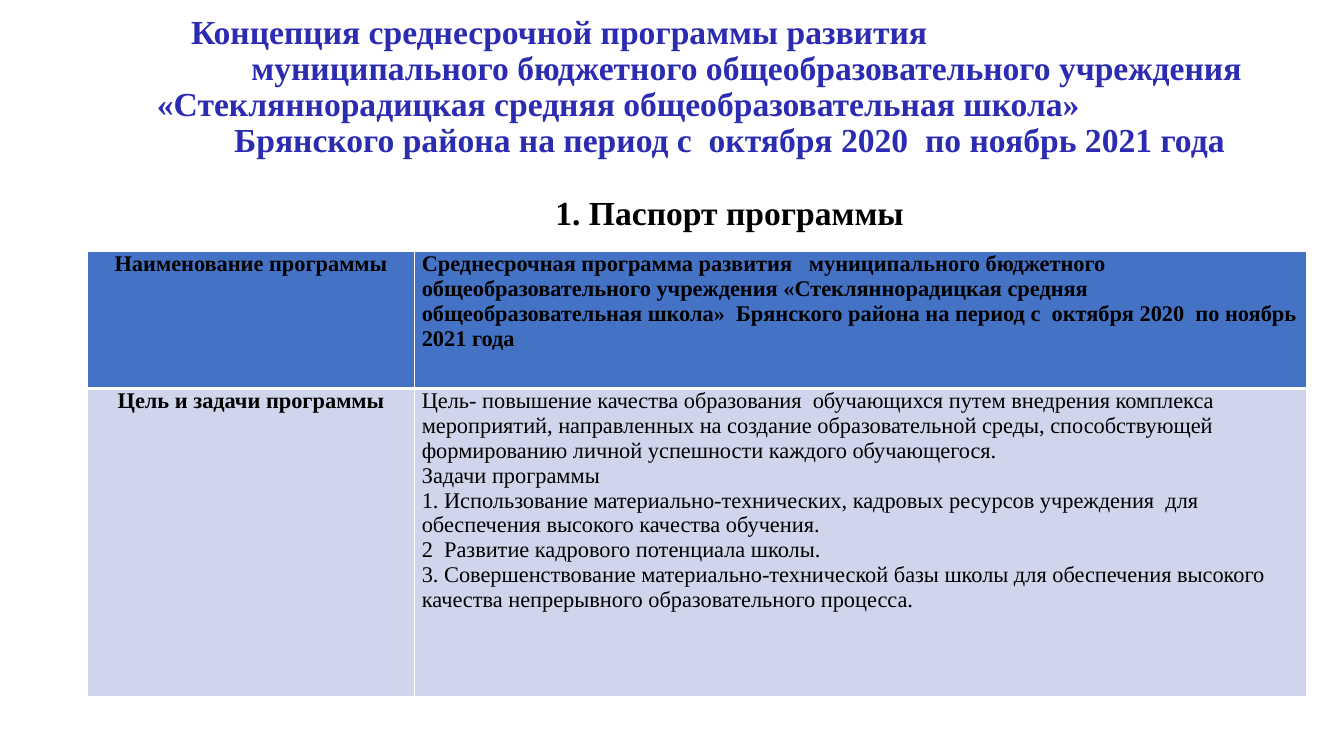
import pptx
import pptx.util
import pptx.dml.color
import pptx.enum.text
import pptx.oxml

Cm, Pt = pptx.util.Cm, pptx.util.Pt
RGBColor = pptx.dml.color.RGBColor
PP_ALIGN = pptx.enum.text.PP_ALIGN
ANCHOR = pptx.enum.text.MSO_ANCHOR

NAVY = RGBColor(0x2C, 0x2C, 0xB2)
BLACK = RGBColor(0, 0, 0)
BLUE = RGBColor(0x44, 0x72, 0xC4)
PALE = RGBColor(0xCF, 0xD5, 0xEA)
WHITE = RGBColor(0xFF, 0xFF, 0xFF)
FACE = "Times New Roman"


def style(para, size, color, bold, align):
    para.alignment = align
    look = {"name": FACE, "size": Pt(size), "bold": bold}
    for run in para.runs:
        for key, value in look.items():
            setattr(run.font, key, value)
        run.font.color.rgb = color


def edge(cell, side, width):
    """Draw one cell border; side is L, R, T or B."""
    line = pptx.oxml.parse_xml(
        f'<a:ln{side} xmlns:a="http://schemas.openxmlformats.org/drawingml/2006/main"'
        f' w="{Pt(width)}"><a:solidFill><a:srgbClr val="{WHITE}"/></a:solidFill></a:ln{side}>')
    cell._tc.get_or_add_tcPr().append(line)


deck = pptx.Presentation()
deck.slide_width, deck.slide_height = Cm(33.87), Cm(19.05)
slide = deck.slides.add_slide(deck.slide_layouts[5])

# Title: text, left indent in cm (None for centred), colour
lines = [
    ("Концепция среднесрочной программы развития", 2.22, NAVY),
    ("муниципального бюджетного общеобразовательного учреждения", None, NAVY),
    ("«Стекляннорадицкая средняя общеобразовательная школа»", 1.36, NAVY),
    ("Брянского района на период с  октября 2020  по ноябрь 2021 года", None, NAVY),
    ("1. Паспорт программы", None, BLACK),
]
title = slide.shapes.title
place = {"left": Cm(2.34), "top": Cm(0.25), "width": Cm(30.73), "height": Cm(5.75)}
for key, value in place.items():
    setattr(title, key, value)
frame = title.text_frame
frame.text = "\n".join(text for text, _, _ in lines)
frame.word_wrap = True
frame.auto_size = pptx.enum.text.MSO_AUTO_SIZE.NONE
frame.vertical_anchor = ANCHOR.MIDDLE
for para, (_, indent, color) in zip(frame.paragraphs, lines):
    para.line_spacing = 0.9
    para.space_before = Pt(0)
    if indent:
        para._p.get_or_add_pPr().set("marL", str(Cm(indent)))
    style(para, 24, color, True, PP_ALIGN.LEFT if indent else PP_ALIGN.CENTER)
frame.paragraphs[-1].space_before = Pt(26)

# Programme passport
rows = [
    ["Наименование программы",
     "Среднесрочная программа развития   муниципального бюджетного "
     "общеобразовательного учреждения «Стекляннорадицкая средняя "
     "общеобразовательная школа»  Брянского района на период с  октября 2020  "
     "по ноябрь 2021 года"],
    ["Цель и задачи программы",
     "Цель- повышение качества образования  обучающихся путем внедрения "
     "комплекса мероприятий, направленных на создание образовательной среды, "
     "способствующей формированию личной успешности каждого обучающегося.\n"
     "Задачи программы\n"
     "1. Использование материально-технических, кадровых ресурсов учреждения  "
     "для обеспечения высокого качества обучения.\n"
     "2  Развитие кадрового потенциала школы.\n"
     "3. Совершенствование материально-технической базы школы для обеспечения "
     "высокого качества непрерывного образовательного процесса."],
]
table = slide.shapes.add_table(2, 2, Cm(2.2), Cm(6.34), Cm(30.73), Cm(11.22)).table
for col, width in zip(table.columns, (8.25, 22.48)):
    col.width = Cm(width)
for row, height in zip(table.rows, (3.45, 7.77)):
    row.height = Cm(height)

inset = {"margin_left": Cm(0.18), "margin_right": Cm(0.18),
         "margin_top": 0, "margin_bottom": 0, "vertical_anchor": ANCHOR.TOP}
for r, texts in enumerate(rows):
    head = r == 0
    for c, text in enumerate(texts):
        cell = table.cell(r, c)
        cell.text = text
        for key, value in inset.items():
            setattr(cell, key, value)
        for side in "LRTB":
            edge(cell, side, 3 if side == ("B" if head else "T") else 1)
        cell.fill.solid()
        cell.fill.fore_color.rgb = BLUE if head else PALE
        align = PP_ALIGN.LEFT if c else PP_ALIGN.CENTER
        for para in cell.text_frame.paragraphs:
            style(para, 16, BLACK, head or c == 0, align)

deck.save("out.pptx")
